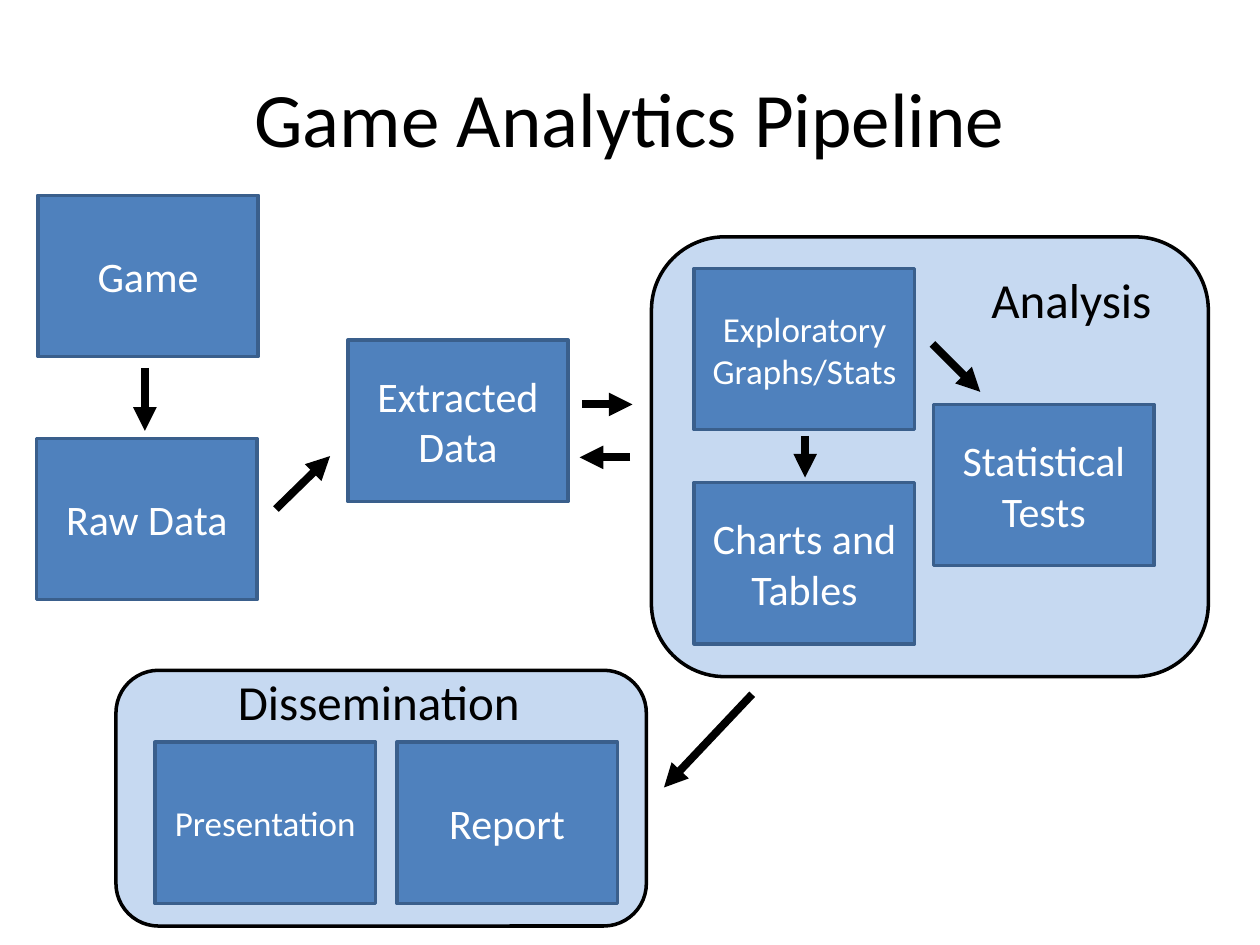
from dataclasses import dataclass

from pptx import Presentation
from pptx.dml.color import RGBColor
from pptx.enum.shapes import MSO_CONNECTOR, MSO_SHAPE
from pptx.enum.text import MSO_ANCHOR, PP_ALIGN
from pptx.oxml.ns import qn
from pptx.util import Inches, Pt
from lxml.etree import SubElement


@dataclass(frozen=True)
class Theme:
    font: str = "Calibri"
    ink: str = "000000"
    box_fill: str = "4F81BD"
    box_line: str = "3A5F8C"
    box_text: str = "FFFFFF"
    group_fill: str = "C6D9F1"
    title_size: int = 44
    group_size: int = 28
    step_size: int = 24
    small_size: int = 20
    outline: float = 2
    arrow: float = 4.5


THEME = Theme()
TITLE = ("Game Analytics Pipeline", (0.5, 0.3, 9, 1.25))
STEP_SIZE = (1.75, 1.28)

# Name, panel area, label area
GROUPS = [
    ("Analysis", (5.17, 1.88, 4.42, 3.49), (7.77, 2.09, 1.49, 0.57)),
    ("Dissemination", (0.92, 5.32, 4.21, 2.03), (1.79, 5.28, 2.47, 0.57)),
]

# Name, left, top, type size
STEPS = [
    ("Game", 0.3, 1.55, THEME.step_size),
    ("Raw Data", 0.29, 3.48, THEME.step_size),
    ("Extracted Data", 2.76, 2.7, THEME.step_size),
    ("Exploratory Graphs/Stats", 5.51, 2.13, THEME.small_size),
    ("Charts and Tables", 5.51, 3.83, THEME.step_size),
    ("Statistical Tests", 7.41, 3.21, THEME.step_size),
    ("Presentation", 1.23, 5.89, THEME.small_size),
    ("Report", 3.15, 5.89, THEME.step_size),
]

# Start x, start y, end x, end y
ARROWS = [
    (1.15, 2.92, 1.15, 3.42),  # Game to Raw Data
    (2.19, 4.04, 2.62, 3.62),  # Raw Data to Extracted Data
    (4.62, 3.21, 5.02, 3.21),  # Extracted Data to Analysis
    (5, 3.63, 4.6, 3.63),  # Analysis back to Extracted Data
    (7.4, 2.73, 7.78, 3.11),  # Exploratory to Statistical Tests
    (6.39, 3.46, 6.39, 3.79),  # Exploratory to Charts and Tables
    (5.97, 5.51, 5.27, 6.25),  # Analysis to Dissemination
]


def inches(values):
    return [Inches(value) for value in values]


def color(value):
    return RGBColor.from_string(value)


def write(shape, text, size, ink, align=PP_ALIGN.CENTER):
    paragraph = shape.text_frame.paragraphs[0]
    paragraph.text = text
    paragraph.alignment = align
    paragraph.font.name = THEME.font
    paragraph.font.size = Pt(size)
    paragraph.font.color.rgb = color(ink)


def add_box(page, kind, area, fill, line):
    box = page.shapes.add_shape(kind, *inches(area))
    box.shadow.inherit = False
    box.fill.solid()
    box.fill.fore_color.rgb = color(fill)
    box.line.color.rgb = color(line)
    box.line.width = Pt(THEME.outline)
    return box


def add_title(page):
    text, area = TITLE
    title = page.shapes.title
    title.left, title.top, title.width, title.height = inches(area)
    title.text_frame.vertical_anchor = MSO_ANCHOR.MIDDLE
    write(title, text, THEME.title_size, THEME.ink)


def add_group(page, name, panel_area, label_area):
    add_box(page, MSO_SHAPE.ROUNDED_RECTANGLE, panel_area,
            THEME.group_fill, THEME.ink)
    label = page.shapes.add_textbox(*inches(label_area))
    label.text_frame.word_wrap = False
    write(label, name, THEME.group_size, THEME.ink, PP_ALIGN.LEFT)


def add_step(page, name, left, top, size):
    box = add_box(page, MSO_SHAPE.RECTANGLE, (left, top, *STEP_SIZE),
                  THEME.box_fill, THEME.box_line)
    box.text_frame.word_wrap = True
    box.text_frame.vertical_anchor = MSO_ANCHOR.MIDDLE
    write(box, name, size, THEME.box_text)


def add_arrow(page, ends):
    arrow = page.shapes.add_connector(MSO_CONNECTOR.STRAIGHT, *inches(ends))
    arrow.line.color.rgb = color(THEME.ink)
    arrow.line.width = Pt(THEME.arrow)
    SubElement(arrow.line._get_or_add_ln(), qn("a:tailEnd"), type="triangle")
    SubElement(arrow._element.spPr, qn("a:effectLst"))


def main():
    deck = Presentation()
    deck.slide_width, deck.slide_height = Inches(10), Inches(7.5)
    page = deck.slides.add_slide(deck.slide_layouts[5])
    add_title(page)
    for group in GROUPS:
        add_group(page, *group)
    for step in STEPS:
        add_step(page, *step)
    for ends in ARROWS:
        add_arrow(page, ends)
    deck.save("out.pptx")


if __name__ == "__main__":
    main()
